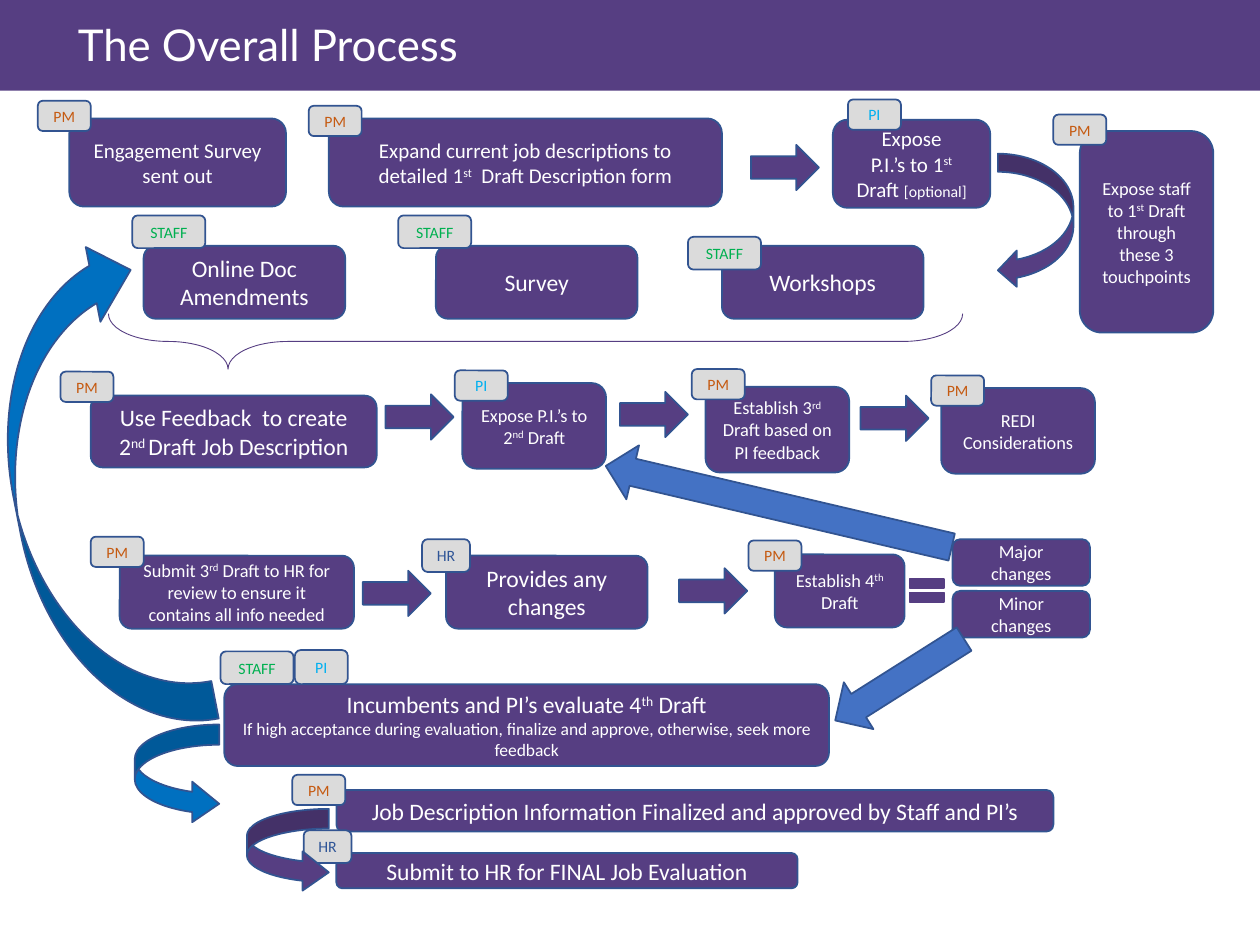
from pptx import Presentation
from pptx.dml.color import RGBColor
from pptx.enum.shapes import MSO_SHAPE
from pptx.enum.text import MSO_ANCHOR, PP_ALIGN
from pptx.util import Inches, Pt

COLORS = {
    "purple": "563E82", "outline": "325491", "white": "FFFFFF", "gray": "DBDBDB",
    "blue": "4472C4", "loop": "0070C0",
    "PM": "C55A11", "PI": "00B0F0", "STAFF": "00B050", "HR": "2F5597",
}
ROUND, RIGHT, DOWN, CURVE = (MSO_SHAPE.ROUNDED_RECTANGLE, MSO_SHAPE.RIGHT_ARROW,
                             MSO_SHAPE.DOWN_ARROW, MSO_SHAPE.CURVED_LEFT_ARROW)

deck = Presentation()
deck.slide_width, deck.slide_height = Inches(10), Inches(7.5)
page = deck.slides.add_slide(deck.slide_layouts[6])

# Grid of 100 columns and 75 rows
column, row = deck.slide_width / 100, deck.slide_height / 75


def add_part(kind, left, top, width, height, fill, line="outline", weight=1):
    part = page.shapes.add_shape(kind, round(left * column), round(top * row),
                                 round(width * column), round(height * row))
    part.shadow.inherit = False
    if fill:
        part.fill.solid()
        part.fill.fore_color.rgb = RGBColor.from_string(COLORS[fill])
    else:
        part.fill.background()
    if line:
        part.line.color.rgb = RGBColor.from_string(COLORS[line])
        part.line.width = Pt(weight)
    else:
        part.line.fill.background()
    return part


def write(box, text, size, color="white", small=9, font="Calibri",
          align=PP_ALIGN.CENTER, anchor=MSO_ANCHOR.MIDDLE, wrap=True):
    """A pair of ^ marks superscript; text after ~ takes the small size."""
    frame = box.text_frame
    for name, value in {"word_wrap": wrap, "vertical_anchor": anchor}.items():
        setattr(frame, name, value)
    for number, line in enumerate(text.split("\n")):
        para = frame.paragraphs[0] if number == 0 else frame.add_paragraph()
        para.alignment = align
        for points, section in zip((size, small), line.split("~")):
            for index, piece in enumerate(section.split("^")):
                if not piece:
                    continue
                span = para.add_run()
                span.text = piece
                for name, value in {"size": Pt(points), "name": font}.items():
                    setattr(span.font, name, value)
                span.font.color.rgb = RGBColor.from_string(COLORS[color])
                if index % 2:
                    span.font._element.set("baseline", "30000")


# Title band
add_part(MSO_SHAPE.RECTANGLE, -0.1, -0.2, 100.2, 7.4, "purple", None)
title = page.shapes.add_textbox(round(5.2 * column), round(1.4 * row),
                                round(41.3 * column), round(5.5 * row))
write(title, "The Overall Process", 25, font="Lato",
      align=PP_ALIGN.LEFT, anchor=MSO_ANCHOR.TOP)
title.text_frame.paragraphs[0].line_spacing = 0.9

# Process steps: left, top, width, height, size, text
steps = [
    (5.5, 9.4, 17.2, 7, 12, "Engagement Survey sent out"),
    (26.1, 9.4, 31.2, 7, 12,
     "Expand current job descriptions to detailed 1^st^  Draft Description form"),
    (66.1, 9.5, 12.5, 7, 12, "Expose\nP.I.’s to 1^st^ Draft ~[optional]"),
    (85.7, 10.4, 10.6, 16, 10.5, "Expose staff to 1^st^ Draft through these 3 touchpoints"),
    (11.4, 19.5, 16, 5.8, 13.5, "Online Doc Amendments"),
    (34.6, 19.5, 16, 5.8, 13.5, "Survey"),
    (57.3, 19.5, 16, 5.8, 13.5, "Workshops"),
    (7.2, 31.4, 22.7, 5.7, 13.5, "Use Feedback  to create 2^nd ^Draft Job Description"),
    (36.7, 30.4, 11.4, 6.8, 10.5, "Expose P.I.’s to 2^nd^ Draft"),
    (56, 30.7, 11.4, 6.8, 10.5, "Establish 3^rd^ Draft based on PI feedback"),
    (74.7, 30.8, 12.2, 6.8, 10.5, "REDI Considerations"),
    (9.5, 44.1, 18.6, 5.8, 10.5,
     "Submit 3^rd^ Draft to HR for review to ensure it contains all info needed"),
    (35.4, 44.1, 16, 5.8, 13.5, "Provides any changes"),
    (61.5, 44, 10.3, 5.8, 10.5, "Establish 4^th ^Draft"),
    (75.6, 42.8, 10.9, 3.7, 10.5, "Major changes"),
    (75.6, 46.9, 10.9, 3.7, 10.5, "Minor changes"),
    (17.8, 54.3, 48, 6.5, 13.5,
     "Incumbents and PI’s evaluate 4^th^ Draft\n~If high acceptance during evaluation, "
     "finalize and approve, otherwise, seek more feedback"),
    (26.7, 62.7, 56.9, 3.3, 13.5,
     "Job Description Information Finalized and approved by Staff and PI’s"),
    (26.7, 67.7, 36.6, 2.8, 13.5, "Submit to HR for FINAL Job Evaluation"),
]
for left, top, width, height, size, text in steps:
    write(add_part(ROUND, left, top, width, height, "purple"), text, size,
          small=10 if size == 13.5 else 9)

# Role tags: size and corners of each role
tags = {
    "PM": (4.2, 2.4, [(3, 8), (24.5, 8.4), (83.6, 9.1), (4.8, 29.5), (54.9, 29.3),
                      (73.9, 29.8), (59.4, 42.9), (7.2, 42.6), (23.2, 61.5)]),
    "PI": (4.2, 2.4, [(67.3, 7.9), (36.1, 29.4)]),
    "STAFF": (5.8, 2.6, [(10.5, 17.1), (31.6, 17.1), (54.6, 18.8), (17.5, 51.7)]),
    "HR": (3.8, 2.6, [(33.5, 42.8), (24.1, 65.9)]),
}
for role, (width, height, corners) in tags.items():
    for left, top in corners:
        write(add_part(ROUND, left, top, width, height, "gray"), role, 9, role, wrap=False)
write(add_part(ROUND, 23.4, 51.6, 4.2, 2.7, "gray"), "PI", 9, "PI", wrap=False)

# Straight arrows between steps
for left, top in [(59.6, 11.5), (30.6, 31.3), (49.2, 31.1), (68.3, 31.4),
                  (28.8, 45.3), (53.9, 45.1)]:
    add_part(RIGHT, left, top, 5.4, 3.6, "purple")

# Slanted arrows from the two kinds of change
for left, top, height, angle in [(59.6, 26.1, 28.2, 103.2), (69.2, 47.9, 12.1, 57.7)]:
    add_part(DOWN, left, top, 4.4, height, "blue").rotation = angle

# Equal sign and brace under the touchpoints
add_part(MSO_SHAPE.MATH_EQUAL, 71.7, 45.3, 3.7, 3.1, "purple", "purple")
brace = add_part(MSO_SHAPE.RIGHT_BRACE, 40.3, -6.8, 4.4, 67.8, None, "purple", 0.5)
brace.rotation = 90
brace.adjustments[0], brace.adjustments[1] = 1.58, 0.86

# Curved arrows: place, fill, head length, flips, rotation
curves = [
    (79.2, 12.2, 6, 10.7, "purple", 0.25, [], 0),
    (10.7, 57.5, 6.7, 7.9, "loop", 0.32, ["flipH"], 0),
    (19.6, 64.2, 6.5, 6.6, "purple", 0.32, ["flipH"], 0),
    (1.1, 19.3, 12.6, 39.3, "loop", 0.25, ["flipH", "flipV"], 348.9),
]
for left, top, width, height, fill, head, flips, angle in curves:
    curve = add_part(CURVE, left, top, width, height, fill)
    curve.rotation = angle
    for index, value in enumerate((0.24, 0.48, head)):
        curve.adjustments[index] = value
    for flip in flips:
        curve._element.spPr.xfrm.set(flip, "1")

deck.save("out.pptx")
